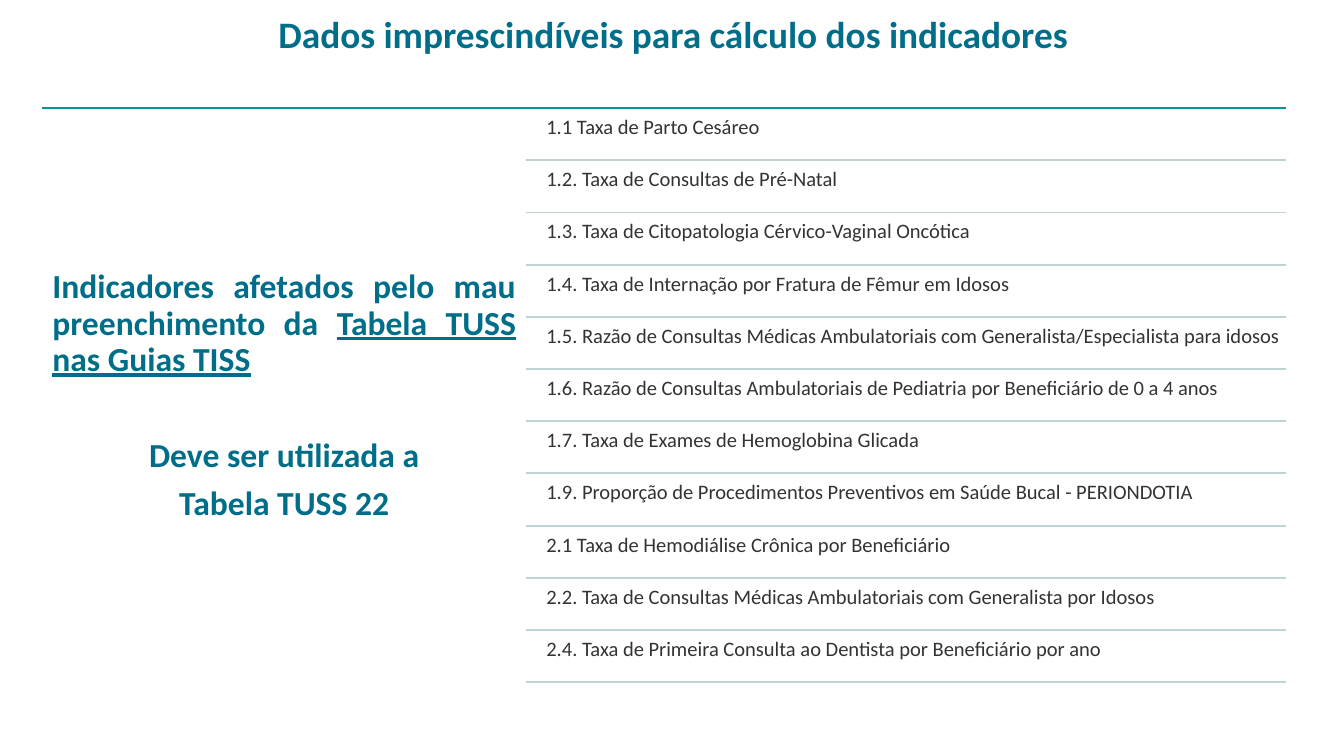
from lxml import etree
from pptx import Presentation
from pptx import util as u
from pptx.dml.color import RGBColor
from pptx.enum import shapes, text
from pptx.oxml.ns import qn

TEAL, GREEN, PALE, GRAY = "006E89", "009999", "BDD4D4", "333333"
LEFT, SPLIT, RIGHT = 0.63, 7.83, 19.13
TOP, BOTTOM = 1.61, 10.15
A = text.PP_ALIGN


def color(value):
    return RGBColor.from_string(value)


class Deck:
    font = "Calibri"

    def __init__(self, width, height):
        self.prs = Presentation()
        self.prs.slide_width = u.Inches(width)
        self.prs.slide_height = u.Inches(height)
        self.s = self.prs.slides.add_slide(self.prs.slide_layouts[6])

    def line(self, x1, x2, y, fill):
        c = self.s.shapes.add_connector(
            shapes.MSO_CONNECTOR.STRAIGHT,
            u.Inches(x1), u.Inches(y), u.Inches(x2), u.Inches(y))
        c.line.color.rgb = color(fill)
        c.line.width = u.Pt(2)
        etree.SubElement(c._element.spPr, qn("a:effectLst"))

    def box(self, x, y, w, h, inset, anchor=text.MSO_ANCHOR.TOP):
        sp = self.s.shapes.add_textbox(
            u.Inches(x), u.Inches(y), u.Inches(w), u.Inches(h))
        tf = sp.text_frame
        tf.word_wrap = True
        tf.vertical_anchor = anchor
        tf.margin_left = tf.margin_right = u.Inches(inset)
        tf.margin_top = tf.margin_bottom = u.Inches(inset)
        return tf

    def para(self, tf, runs, size, fill, bold=False, align=A.LEFT,
             spacing=0.9, after=0):
        """Add a paragraph; runs are (words, underlined) pairs."""
        p = tf.paragraphs[0]
        if p.runs:
            p = tf.add_paragraph()
        p.alignment = align
        p.line_spacing = spacing
        p.space_after = u.Pt(after)
        for words, underlined in runs:
            r = p.add_run()
            r.text = words
            r.font.name = self.font
            r.font.size = u.Pt(size)
            r.font.bold = bold
            r.font.underline = underlined
            r.font.color.rgb = color(fill)


INDICATORS = [
    "1.1 Taxa de Parto Cesáreo",
    "1.2. Taxa de Consultas de Pré-Natal",
    "1.3. Taxa de Citopatologia Cérvico-Vaginal Oncótica",
    "1.4. Taxa de Internação por Fratura de Fêmur em Idosos",
    "1.5. Razão de Consultas Médicas Ambulatoriais com Generalista/Especialista para idosos",
    "1.6. Razão de Consultas Ambulatoriais de Pediatria por Beneficiário de 0 a 4 anos",
    "1.7. Taxa de Exames de Hemoglobina Glicada",
    "1.9. Proporção de Procedimentos Preventivos em Saúde Bucal - PERIONDOTIA",
    "2.1 Taxa de Hemodiálise Crônica por Beneficiário",
    "2.2. Taxa de Consultas Médicas Ambulatoriais com Generalista por Idosos",
    "2.4. Taxa de Primeira Consulta ao Dentista por Beneficiário por ano",
]


def main():
    deck = Deck(20, 11.25)

    # Title and top rule
    tf = deck.box(1.02, 0.11, 18, 1.88, 0.08)
    tf.margin_top = u.Inches(0.05)
    deck.para(tf, [("Dados imprescindíveis para cálculo dos indicadores", False)],
              40, TEAL, True, A.CENTER, spacing=1)
    deck.line(LEFT, RIGHT, TOP, GREEN)

    # Left message
    tf = deck.box(LEFT, TOP, SPLIT - LEFT, 8.58, 0.15, text.MSO_ANCHOR.MIDDLE)
    deck.para(tf, [("Indicadores afetados pelo mau preenchimento da ", False),
                   ("Tabela TUSS nas Guias TISS", True)],
              36, TEAL, True, A.JUSTIFY, after=64)
    for words in ("Deve ser utilizada a", "Tabela TUSS 22"):
        deck.para(tf, [(words, False)], 36, TEAL, True, A.CENTER, after=12.6)

    # Indicator rows, each closed by a rule
    pitch = (BOTTOM - TOP) / len(INDICATORS)
    for i, words in enumerate(INDICATORS):
        y = TOP + i * pitch
        tf = deck.box(8.04, y + 0.04, 11.15, 0.74, 0.09)
        deck.para(tf, [(words, False)], 22, GRAY)
        deck.line(SPLIT, RIGHT, y + pitch, PALE)

    deck.prs.save("out.pptx")


if __name__ == "__main__":
    main()
